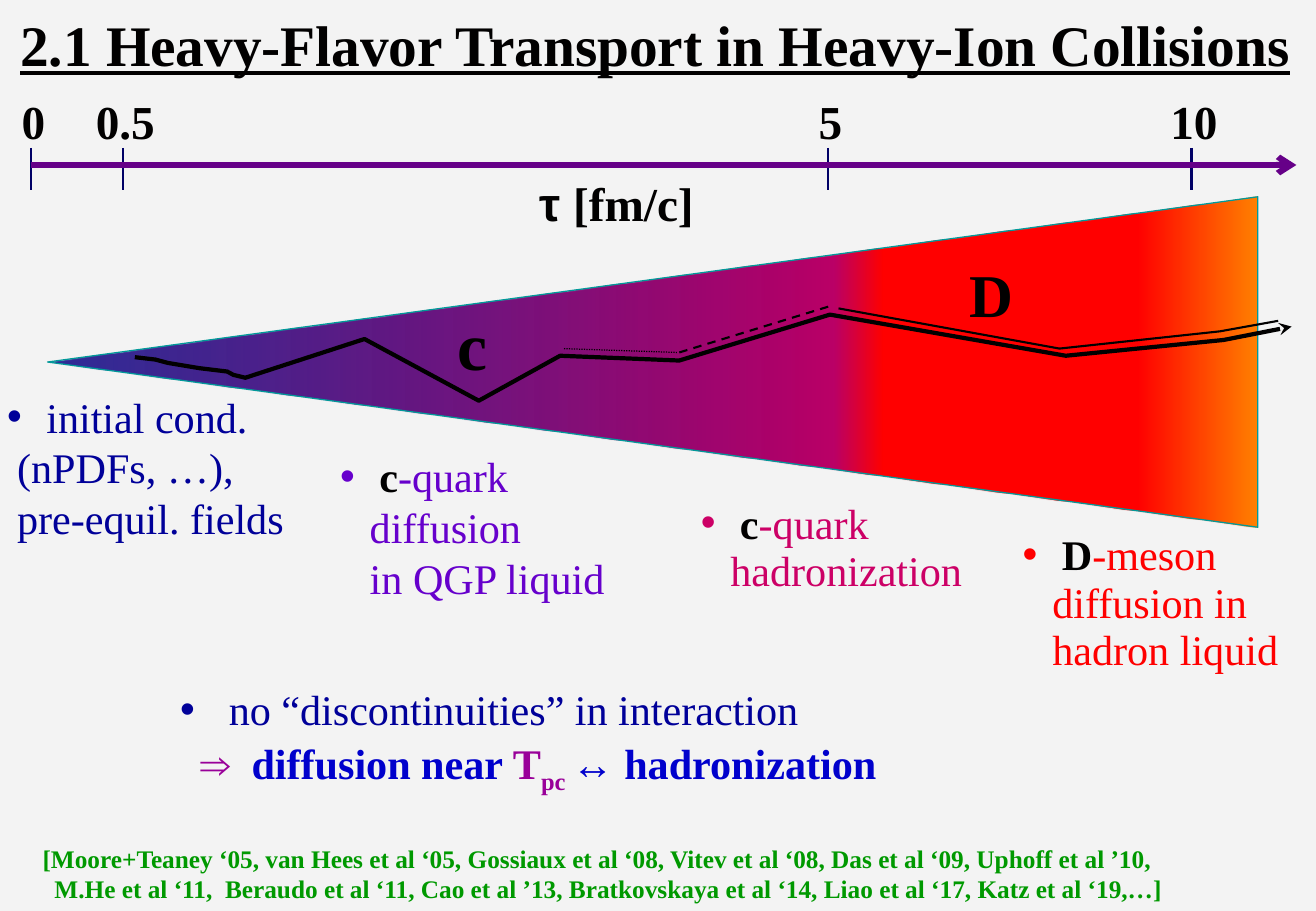
"""Build a slide on heavy-flavor transport in heavy-ion collisions."""
from lxml.etree import SubElement
from pptx import Presentation
from pptx.dml.color import RGBColor
from pptx.enum.dml import MSO_LINE
from pptx.enum.shapes import MSO_CONNECTOR, MSO_SHAPE
from pptx.enum.text import MSO_ANCHOR, MSO_AUTO_SIZE, PP_ALIGN
from pptx.oxml.ns import qn
from pptx.util import Cm, Pt

SERIF = "Times New Roman"
BLACK, NAVY, BLUE, PURPLE = "010000", "000099", "0000CC", "990099"
VIOLET, PINK, RED, GREEN = "6600CC", "CC0066", "FF0000", "009900"
AXIS, TICK = "660088", "000066"


def color(value):
    return RGBColor.from_string(value)


def write(box, paragraphs, size, pitch=None, bold=False, align=PP_ALIGN.LEFT):
    """Fill a box with (margin, indent, bullet colour, spans) paragraphs."""
    frame = box.text_frame
    frame.word_wrap = True
    frame.auto_size = MSO_AUTO_SIZE.NONE
    for number, (margin, indent, bullet, spans) in enumerate(paragraphs):
        para = frame.add_paragraph() if number else frame.paragraphs[0]
        formats = {"alignment": align, "space_before": Pt(0), "line_spacing": Pt(pitch) if pitch else 1.0}
        for name, value in formats.items():
            setattr(para, name, value)
        properties = para._p.get_or_add_pPr()
        properties.set("marL", str(Cm(margin)))
        properties.set("indent", str(Cm(indent)))
        if bullet:
            tint = SubElement(properties, qn("a:buClr"))
            SubElement(tint, qn("a:srgbClr"), val=bullet)
            SubElement(properties, qn("a:buFont"), typeface="Arial")
            SubElement(properties, qn("a:buChar"), char="•")
        else:
            SubElement(properties, qn("a:buNone"))
        for text, tone, changes in spans:
            span = para.add_run()
            span.text = text
            for name, value in ({"name": SERIF, "size": Pt(size), "bold": bold} | changes).items():
                setattr(span.font, name, value)
            span.font.color.rgb = color(tone)


deck = Presentation()
deck.slide_width, deck.slide_height = Cm(27.51), Cm(19.05)
page = deck.slides.add_slide(deck.slide_layouts[1])
page.background.fill.solid()
page.background.fill.fore_color.rgb = color("F3F3F3")

title, body = page.placeholders
for holder, area in ((title, (-0.18, -0.1, 27.76, 2.03)), (body, (3.51, 14.17, 21.06, 2.62))):
    holder.left, holder.top, holder.width, holder.height = map(Cm, area)
title.text_frame.vertical_anchor = MSO_ANCHOR.MIDDLE
write(title, [(0, 0, None, [("2.1 Heavy-Flavor Transport in Heavy-Ion Collisions", BLACK, {"underline": True})])],
      34, bold=True, align=PP_ALIGN.CENTER)

strong = {"bold": True}
write(body, [
    (1.02, -1.02, NAVY, [("no “discontinuities” in interaction", NAVY, {})]),
    (0.42, 0, None, [("⇒  ", PURPLE, strong), ("diffusion near ", BLUE, strong), ("T", PURPLE, strong),
                     ("pc ", PURPLE, strong), ("↔ ", BLUE, {}), ("hadronization", BLUE, strong)]),
], 25, 30)
conclusion = body.text_frame.paragraphs[1]
conclusion.space_before = Pt(6)
conclusion.runs[3]._r.get_or_add_rPr().set("baseline", "-25000")

fireball = page.shapes.add_shape(MSO_SHAPE.ISOSCELES_TRIANGLE, Cm(10.19), Cm(-5.08), Cm(6.91), Cm(25.3))
fireball.rotation = 270
fireball.shadow.inherit = False
fireball.line.color.rgb = color("009999")
fireball.line.width = Pt(0.75)
fireball.fill.gradient()
gradient = fireball.element.spPr.find(qn("a:gradFill"))
gradient.set("rotWithShape", "1")
for child in list(gradient):
    gradient.remove(child)
stops = SubElement(gradient, qn("a:gsLst"))
for position, tone in ((0, "000082"), (65, "BA0066"), (69, "FF0000"), (90, "FF0000"), (100, "FF8200")):
    stop = SubElement(stops, qn("a:gs"), pos=str(position * 1000))
    paint = SubElement(stop, qn("a:srgbClr"), val=tone)
    if position == 0:
        SubElement(paint, qn("a:alpha"), val="81000")
SubElement(gradient, qn("a:lin"), ang="5400000", scaled="1")

times = {"0": 0.65, "0.5": 2.57, "5": 17.31, "10": 24.91}
quark_track = [(2.82, 7.47), (3.25, 7.52), (3.51, 7.59), (4.17, 7.7), (4.75, 7.77), (4.88, 7.84),
               (5.13, 7.9), (7.62, 7.09), (10.01, 8.38), (11.71, 7.44), (14.2, 7.54),
               (17.35, 6.58), (22.28, 7.44), (25.58, 7.11), (27, 6.83)]
meson_track = [(17.53, 6.45), (22.15, 7.29), (25.5, 6.93), (26.72, 6.71)]
strokes = [([(x, 3.09), (x, 3.97)], TICK, 1.5, None, None) for x in times.values()] + [
    (quark_track, BLACK, 2.5, None, "stealth"),
    (meson_track, BLACK, 1.25, None, None),
    ([(0.65, 3.45), (27.1, 3.45)], AXIS, 3.5, None, "arrow"),
    ([(14.2, 7.37), (17.42, 6.38)], "000000", 1.25, MSO_LINE.DASH, None),
    ([(11.79, 7.29), (14.15, 7.37)], "000000", 0.75, MSO_LINE.ROUND_DOT, None),
]
for points, tone, width, dash, head in strokes:
    places = [(Cm(x), Cm(y)) for x, y in points]
    if len(places) == 2:
        stroke = page.shapes.add_connector(MSO_CONNECTOR.STRAIGHT, *places[0], *places[1])
    else:
        builder = page.shapes.build_freeform(*places[0], scale=1.0)
        builder.add_line_segments(places[1:], close=False)
        stroke = builder.convert_to_shape()
        stroke.fill.background()
    stroke.line.color.rgb = color(tone)
    stroke.line.width = Pt(width)
    if dash:
        stroke.line.dash_style = dash
    if head:
        SubElement(stroke.element.spPr.find(qn("a:ln")), qn("a:tailEnd"), type=head)
    SubElement(stroke.element.spPr, qn("a:effectLst"))

for label, x in times.items():
    box = page.shapes.add_textbox(Cm(x - 1.2), Cm(1.8), Cm(2.5), Cm(1.45))
    write(box, [(0, 0, None, [(label, BLACK, {})])], 28, bold=True, align=PP_ALIGN.CENTER)

symbols = (
    ((11.02, 3.51, 4.2, 1.45), 28, None, [("τ ", BLACK, {"name": "Arial"}), ("[fm/c]", BLACK, {})]),
    ((9.32, 6.91, 1.5, 1.35), 40, 28, [("c", BLACK, {})]),
    ((20.02, 5.79, 1.7, 1.3), 36, 28, [("D", BLACK, {})]),
)
for area, size, pitch, spans in symbols:
    box = page.shapes.add_textbox(*map(Cm, area))
    write(box, [(0, 0, None, spans)], size, pitch, bold=True)

stages = (
    ((-0.1, 8.05, 6.6, 3.45), NAVY, 30, 0.21, "", "initial cond.", ["(nPDFs, …),", "pre-equil. fields"]),
    ((6.86, 9.3, 7.2, 3.45), VIOLET, 30, 0.62, "c", "-quark", ["diffusion", "in QGP liquid"]),
    ((14.4, 10.34, 6.1, 2.26), PINK, 28, 0.62, "c", "-quark", ["hadronization"]),
    ((21.13, 11, 6.3, 3.3), RED, 28, 0.62, "D", "-meson", ["diffusion in", "hadron liquid"]),
)
for area, tone, pitch, margin, particle, heading, lines in stages:
    spans = [(particle, BLACK, strong)] if particle else []
    paragraphs = [(0.82, -0.82, tone, spans + [(heading, tone, {})])]
    paragraphs += [(margin, 0, None, [(line, tone, {})]) for line in lines]
    write(page.shapes.add_textbox(*map(Cm, area)), paragraphs, 25, pitch)

references = page.shapes.add_textbox(Cm(0.64), Cm(17.5), Cm(26.14), Cm(1.55))
write(references, [
    (0, 0, None, [("[Moore+Teaney ‘05, van Hees et al ‘05, Gossiaux et al ‘08, Vitev et al ‘08, "
                   "Das et al ‘09, Uphoff et al ’10,", GREEN, {})]),
    (0.25, 0, None, [("M.He et al ‘11,  Beraudo et al ‘11, Cao et al ’13, Bratkovskaya et al ‘14, "
                      "Liao et al ‘17, Katz et al ‘19,…]", GREEN, {})]),
], 15, 18, bold=True)

deck.save("out.pptx")
